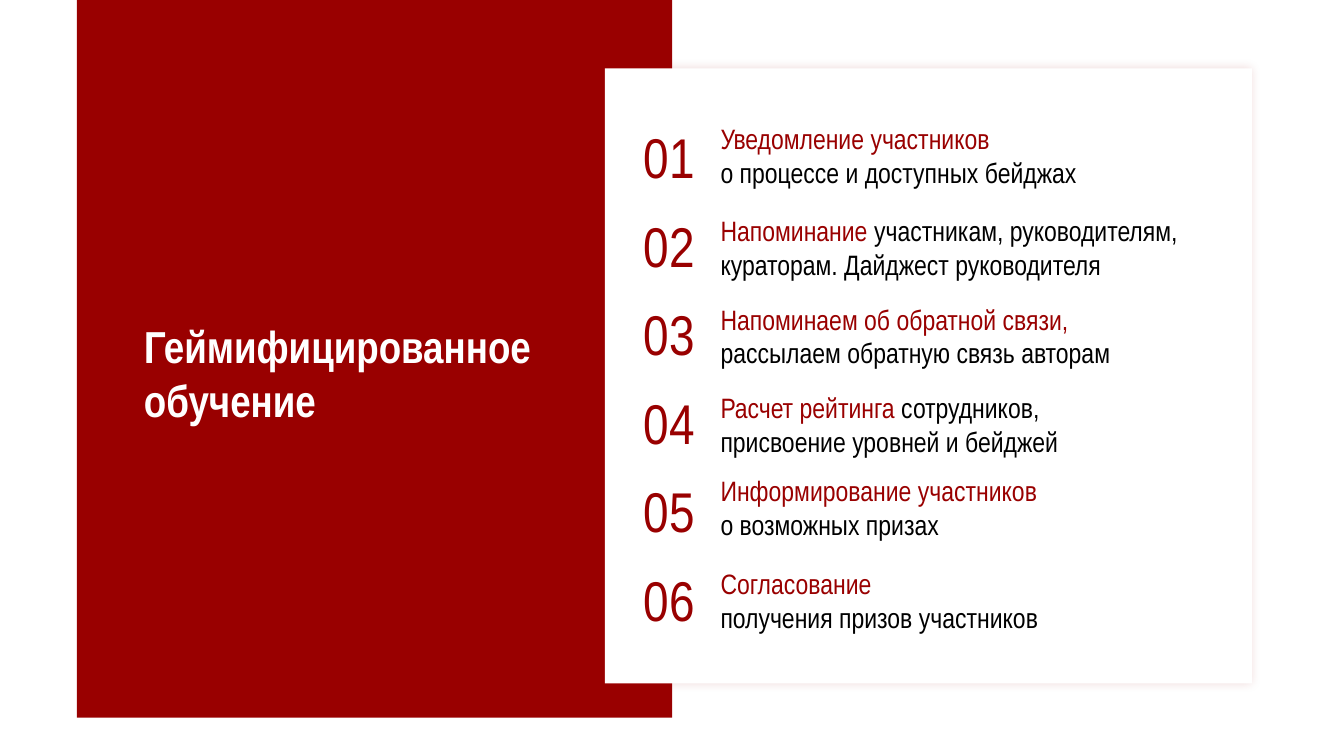
"""Build the slide on gamified learning with six numbered steps."""
from dataclasses import dataclass

from lxml.etree import SubElement
from pptx import Presentation
from pptx.dml.color import RGBColor
from pptx.enum.shapes import MSO_SHAPE as Shape
from pptx.enum.text import MSO_AUTO_SIZE as AutoSize
from pptx.oxml.ns import qn
from pptx.util import Pt

FONT = "Arial Narrow"
RED, WHITE, BLACK = "990000", "FFFFFF", "000000"
NUMBER_TOP, NUMBER_STEP = 84.24, 63.22
ROW_HEIGHT = 55.44


@dataclass
class Span:
    text: str
    color: str


@dataclass
class Box:
    left: float
    top: float
    width: float
    height: float


@dataclass
class Step:
    top: float
    paras: list[list[Span]]
    width: float = 398.16


def two_lines(lead: str, rest: str) -> list[list[Span]]:
    return [[Span(lead, RED)], [Span(rest, BLACK)]]


def one_flow(lead: str, rest: str) -> list[list[Span]]:
    return [[Span(lead, RED), Span(rest, BLACK)]]


STEPS = [
    Step(83.52, two_lines("Уведомление участников", "о процессе и доступных бейджах")),
    Step(149.04, one_flow("Напоминание", " участникам, руководителям, кураторам. Дайджест руководителя")),
    Step(212.4, two_lines("Напоминаем об обратной связи,", "рассылаем обратную связь авторам")),
    Step(275.76, one_flow("Расчет рейтинга ", "сотрудников, присвоение уровней и бейджей"), 290.16),
    Step(334.8, two_lines("Информирование участников", "о возможных призах")),
    Step(401.04, two_lines("Согласование", "получения призов участников")),
]


def paint(color: str) -> RGBColor:
    return RGBColor.from_string(color)


def place(box: Box) -> tuple:
    return Pt(box.left), Pt(box.top), Pt(box.width), Pt(box.height)


def add_panel(page, box: Box, color: str):
    panel = page.shapes.add_shape(Shape.RECTANGLE, *place(box))
    panel.shadow.inherit = False
    panel.fill.solid()
    panel.fill.fore_color.rgb = paint(color)
    panel.line.fill.background()
    return panel


def add_glow_shadow(panel, color: str, blur: float, opacity: int) -> None:
    effects = panel._element.spPr.find(qn("a:effectLst"))
    shadow = SubElement(effects, qn("a:outerShdw"), blurRad=str(Pt(blur)),
                        dist="0", dir="0", algn="ctr", rotWithShape="0")
    tint = SubElement(shadow, qn("a:srgbClr"), val=color)
    SubElement(tint, qn("a:alpha"), val=str(opacity * 1000))


def add_text(page, box: Box, paras: list[list[Span]], size: float,
             bold: bool = False, wrap: bool = True) -> None:
    frame = page.shapes.add_textbox(*place(box)).text_frame
    frame.word_wrap = wrap
    frame.auto_size = AutoSize.SHAPE_TO_FIT_TEXT
    for index, spans in enumerate(paras):
        para = frame.add_paragraph() if index else frame.paragraphs[0]
        for span in spans:
            run = para.add_run()
            run.text = span.text
            run.font.name = FONT
            run.font.size = Pt(size)
            run.font.bold = bold
            run.font.color.rgb = paint(span.color)


def main() -> None:
    deck = Presentation()
    deck.slide_width, deck.slide_height = Pt(960), Pt(540)
    page = deck.slides.add_slide(deck.slide_layouts[6])

    add_panel(page, Box(55, 0, 425.2, 512.64), RED)
    card = add_panel(page, Box(432, 48.96, 462.24, 439.2), WHITE)
    add_glow_shadow(card, RED, 7, 15)
    add_text(page, Box(95.76, 223.92, 308.88, 84.96),
             [[Span("Геймифицированное обучение", WHITE)]], 32, bold=True)

    for index, step in enumerate(STEPS):
        number_top = NUMBER_TOP + index * NUMBER_STEP
        add_text(page, Box(452.88, number_top, 54.72, ROW_HEIGHT),
                 [[Span(f"{index + 1:02}", RED)]], 40, wrap=False)
        add_text(page, Box(507.6, step.top, step.width, ROW_HEIGHT), step.paras, 20)

    deck.save("out.pptx")


if __name__ == "__main__":
    main()
